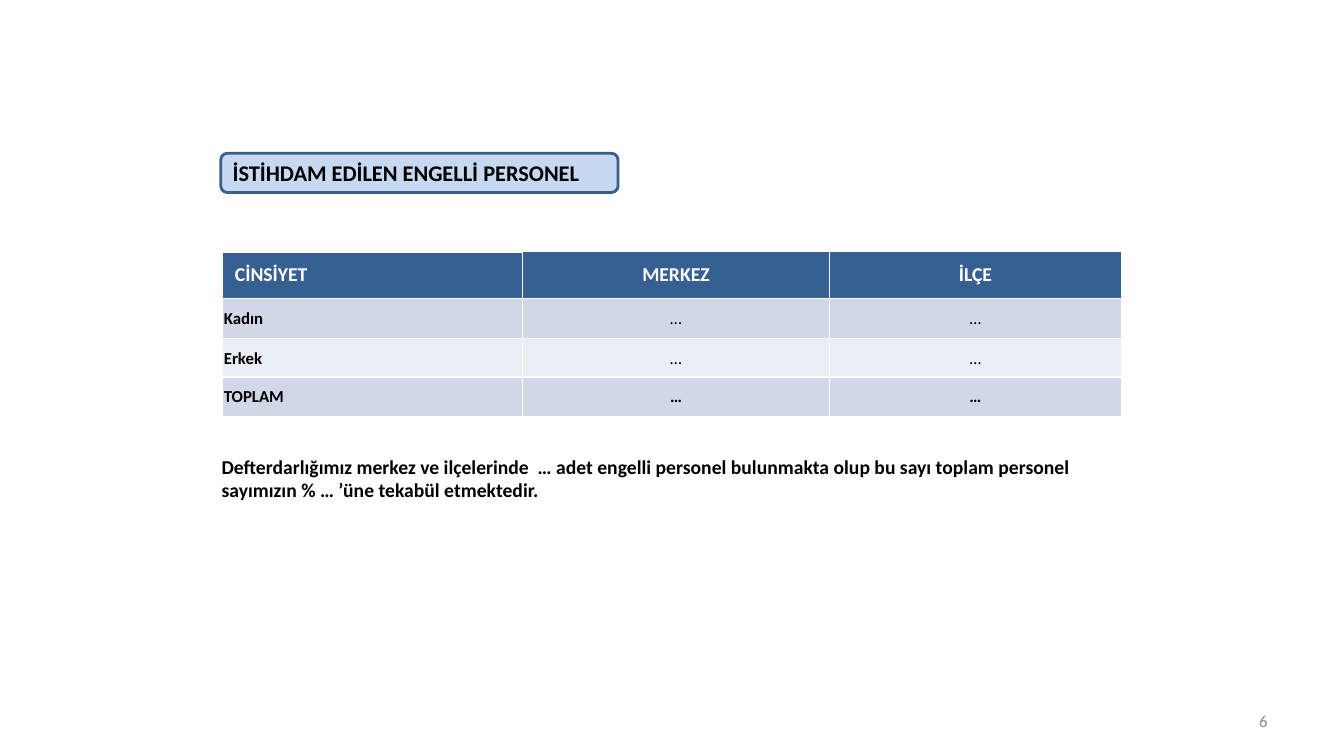
"""Builds the slide on employed disabled personnel."""
from lxml import etree
from pptx import Presentation, util as u
from pptx.dml.color import RGBColor
from pptx.enum import shapes, text
from pptx.oxml.ns import qn

WIDTH, HEIGHT = u.Inches(13.33), u.Inches(7.5)
COLORS = {
    "black": "000000", "white": "FFFFFF", "grey": "898989",
    "label": "C6D9F1", "label_line": "3A5F8C",
    "header": "376092", "odd": "D0D8E8", "even": "E9EDF4",
}
COLUMNS = [22.28, 22.88, 21.68]
ROWS = [6.27, 5.33, 5.07, 5.2]
STAFF = [
    ["CİNSİYET", "MERKEZ", "İLÇE"],
    ["Kadın", "…", "…"],
    ["Erkek", "…", "…"],
    ["TOPLAM", "…", "…"],
]
NOTE = ("Defterdarlığımız merkez ve ilçelerinde  … adet engelli personel bulunmakta "
        "olup bu sayı toplam personel sayımızın % … ’üne tekabül etmektedir.")


def color(name):
    """Return the named colour."""
    return RGBColor.from_string(COLORS[name])


def across(share):
    """Convert a percentage of the slide width to a length."""
    return u.Emu(round(WIDTH * share / 100))


def down(share):
    """Convert a percentage of the slide height to a length."""
    return u.Emu(round(HEIGHT * share / 100))


def place(left, top, width, height):
    """Convert four percentages to a position and a size."""
    return across(left), down(top), across(width), down(height)


def write(frame, words, size, ink="black", bold=True, align=text.PP_ALIGN.LEFT):
    """Write one run into the first paragraph of a text frame."""
    frame.word_wrap = True
    para = frame.paragraphs[0]
    para.alignment = align
    span = para.add_run()
    span.text = words
    span.font.name = "Calibri"
    span.font.size = u.Pt(size)
    span.font.bold = bold
    span.font.color.rgb = color(ink)


def add_label(page, area, words):
    """Add a rounded, outlined heading label."""
    box = page.shapes.add_shape(shapes.MSO_SHAPE.ROUNDED_RECTANGLE, *area)
    box.shadow.inherit = False
    box.fill.solid()
    box.fill.fore_color.rgb = color("label")
    box.line.color.rgb = color("label_line")
    box.line.width = u.Pt(2)
    box.text_frame.vertical_anchor = text.MSO_ANCHOR.MIDDLE
    write(box.text_frame, words, 16)


def add_text(page, area, words, size, anchor=text.MSO_ANCHOR.TOP, **style):
    """Add a plain text box."""
    box = page.shapes.add_textbox(*area)
    box.text_frame.vertical_anchor = anchor
    write(box.text_frame, words, size, **style)


def set_borders(cell, top_width):
    """Draw white lines on all four sides of a cell."""
    properties = cell._tc.get_or_add_tcPr()
    for index, side in enumerate(["lnL", "lnR", "lnT", "lnB"]):
        width = top_width if side == "lnT" else 1
        line = etree.Element(qn(f"a:{side}"), w=str(u.Pt(width)))
        fill = etree.SubElement(line, qn("a:solidFill"))
        etree.SubElement(fill, qn("a:srgbClr"), val=COLORS["white"])
        properties.insert(index, line)


def fill_cell(cell, words, row, column):
    """Style and write one cell according to its place in the table."""
    header, first = row == 0, column == 0
    corner = header and first
    cell.fill.solid()
    cell.fill.fore_color.rgb = color("header" if header else "odd" if row % 2 else "even")
    cell.vertical_anchor = text.MSO_ANCHOR.MIDDLE
    cell.margin_left = u.Inches(0.12 if corner else 0.01)
    cell.margin_right = cell.margin_top = u.Inches(0.01)
    cell.margin_bottom = 0
    set_borders(cell, 3 if corner else 1)
    write(cell.text_frame, words, 14 if header else 12,
          ink="white" if header else "black",
          bold=header or first or row == len(ROWS) - 1,
          align=text.PP_ALIGN.LEFT if first else text.PP_ALIGN.CENTER)


def add_staff_table(page, left, top):
    """Add the table of staff by gender and workplace."""
    area = place(left, top, sum(COLUMNS), sum(ROWS))
    table = page.shapes.add_table(len(ROWS), len(COLUMNS), *area).table
    table.horz_banding = False
    for column, share in enumerate(COLUMNS):
        table.columns[column].width = across(share)
    for row, share in enumerate(ROWS):
        table.rows[row].height = down(share)
        for column, words in enumerate(STAFF[row]):
            fill_cell(table.cell(row, column), words, row, column)


def main():
    """Build and save the deck."""
    deck = Presentation()
    deck.slide_width, deck.slide_height = WIDTH, HEIGHT
    page = deck.slides.add_slide(deck.slide_layouts[6])
    add_label(page, place(16.43, 20.27, 29.56, 5.2), "İSTİHDAM EDİLEN ENGELLİ PERSONEL")
    add_staff_table(page, 16.58, 33.2)
    add_text(page, place(15.75, 59.47, 67.07, 7.6), NOTE, 14)
    add_text(page, place(71.72, 92.67, 23.33, 5.33), "6", 12, text.MSO_ANCHOR.MIDDLE,
             ink="grey", bold=False, align=text.PP_ALIGN.RIGHT)
    deck.save("out.pptx")


if __name__ == "__main__":
    main()
